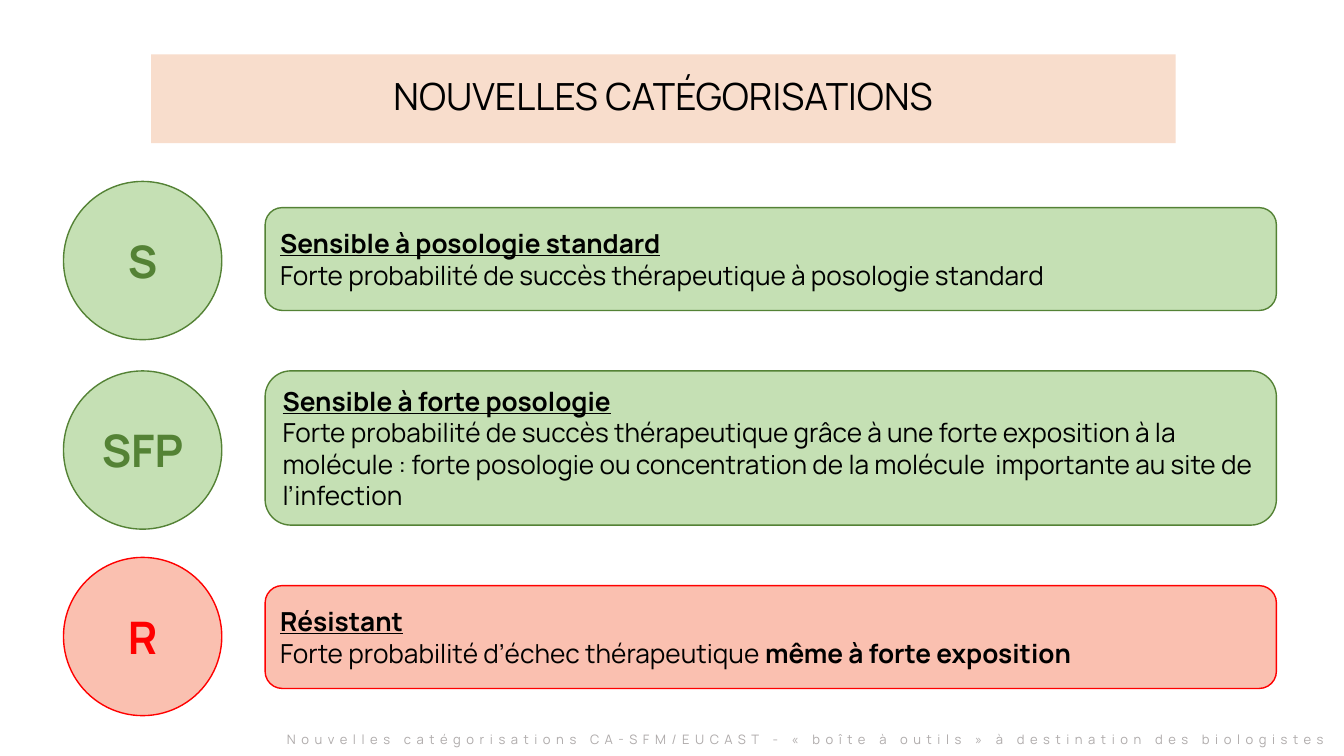
"""Build the slide of the new susceptibility categories."""
from pptx import Presentation
from pptx.dml.color import RGBColor
from pptx.enum.shapes import MSO_SHAPE as Shape
from pptx.enum.text import MSO_ANCHOR as Anchor, MSO_AUTO_SIZE as Fit, PP_ALIGN as Align
from pptx.util import Inches, Pt

TITLE = "NOUVELLES CATÉGORISATIONS"
FOOT = ("Nouvelles catégorisations CA-SFM/EUCAST - «\u00a0boîte à outils\u00a0» "
        "à destination des biologistes")
ROWS = [
    dict(code="S", tone="green", disc=1.8, top=2.06, high=1.02,
         head="Sensible à posologie standard",
         body="Forte probabilité de succès thérapeutique à posologie standard", bold=""),
    dict(code="SFP", tone="green", disc=3.68, top=3.68, high=1.53,
         head="Sensible à forte posologie",
         body="Forte probabilité de succès thérapeutique grâce à une forte exposition à la "
              "molécule : forte posologie ou concentration de la molécule  importante "
              "au site de l’infection", bold=""),
    dict(code="R", tone="red", disc=5.53, top=5.81, high=1.02,
         head="Résistant", body="Forte probabilité d’échec thérapeutique ",
         bold="même à forte exposition"),
]
HEX = {"green": "C5E0B4", "green line": "548235", "red": "FAC0B0", "red line": "FF0000",
       "peach": "F8DDCC", "black": "000000", "grey": "AFABAB"}
FONT = "Manrope"
WIDE, HIGH = 13.33, 7.5
DISC_X, DISC = 0.63, 1.57
BOX_X, BOX_W = 2.63, 10.03


def tint(name):
    return RGBColor.from_string(HEX[name])


def place(*spot):
    return [Inches(n) for n in spot]


def write(shape, paras, size=18.7, color="black", align=Align.LEFT,
          anchor=Anchor.MIDDLE, gap=0, lead=None):
    """Fill a shape with paragraphs of (text, bold, underline) runs."""
    frame = shape.text_frame
    frame.auto_size = Fit.NONE
    frame.word_wrap = True
    frame.vertical_anchor = anchor
    for i, runs in enumerate(paras):
        para = frame.paragraphs[0] if i == 0 else frame.add_paragraph()
        para.alignment = align
        if lead:
            para.line_spacing = lead
        for text, bold, under in runs:
            run = para.add_run()
            run.text = text
            font = run.font
            font.name, font.size = FONT, Pt(size)
            font.bold, font.underline = bold, under
            font.color.rgb = tint(color)
            if gap:
                run._r.get_or_add_rPr().set("spc", str(gap * 100))


def draw(slide, kind, tone, *spot):
    shape = slide.shapes.add_shape(kind, *place(*spot))
    shape.shadow.inherit = False
    shape.fill.solid()
    shape.fill.fore_color.rgb = tint(tone)
    shape.line.color.rgb = tint(tone + " line")
    shape.line.width = Pt(1)
    return shape


def main():
    deck = Presentation()
    deck.slide_width, deck.slide_height = place(WIDE, HIGH)
    slide = deck.slides.add_slide(deck.slide_layouts[5])

    title = slide.shapes.title
    title.left, title.top, title.width, title.height = place(1.5, 0.54, 10.16, 0.88)
    title.fill.solid()
    title.fill.fore_color.rgb = tint("peach")
    write(title, [[(TITLE, False, False)]], size=26.7, align=Align.CENTER, lead=0.9)

    for row in ROWS:
        tone = row["tone"]
        disc = draw(slide, Shape.OVAL, tone, DISC_X, row["disc"], DISC, DISC)
        write(disc, [[(row["code"], True, False)]], size=32,
              color=tone + " line", align=Align.CENTER)
        box = draw(slide, Shape.ROUNDED_RECTANGLE, tone,
                   BOX_X, row["top"], BOX_W, row["high"])
        body = [(row["body"], False, False)]
        if row["bold"]:
            body.append((row["bold"], True, False))
        write(box, [[(row["head"], True, True)], body])

    foot = slide.shapes.add_textbox(*place(0.65, 7.2, 12.59, 0.26))
    write(foot, [[(FOOT, False, False)]], size=9.3, color="grey",
          align=Align.RIGHT, anchor=Anchor.BOTTOM, gap=4)
    deck.save("out.pptx")


if __name__ == "__main__":
    main()
